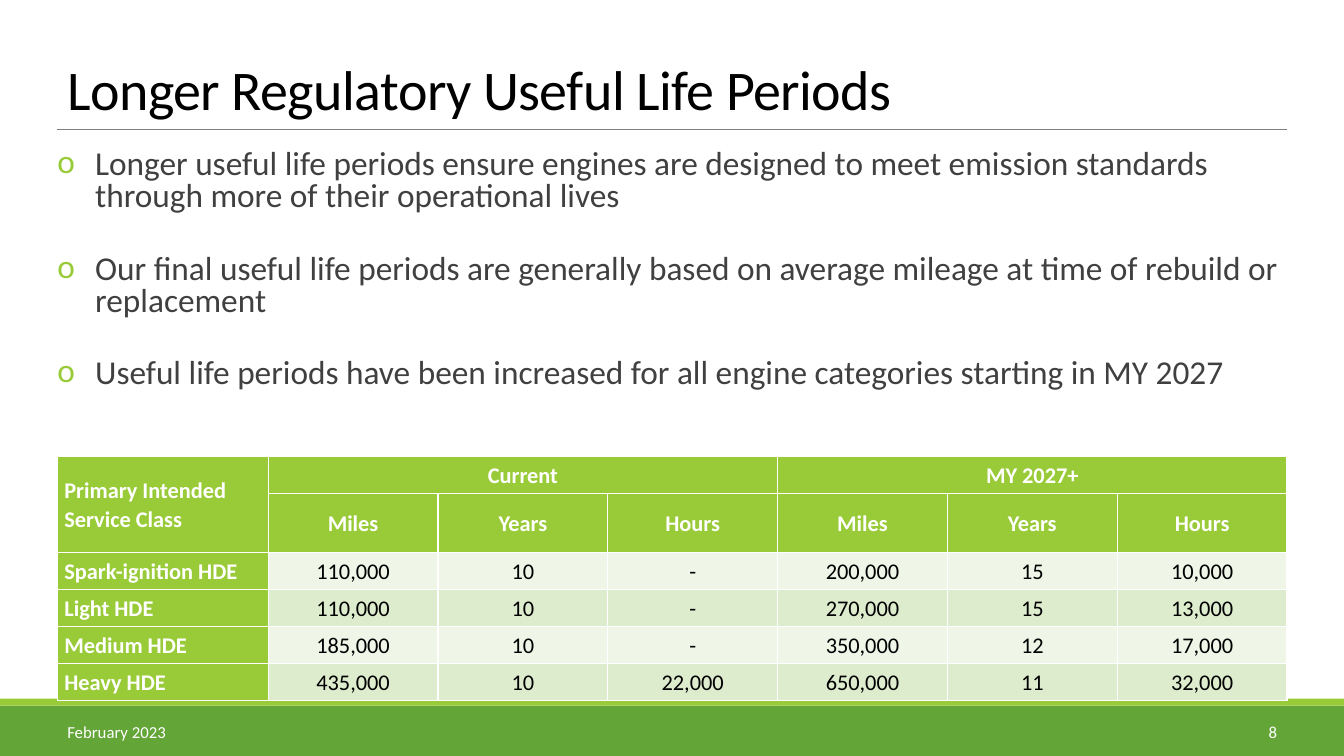
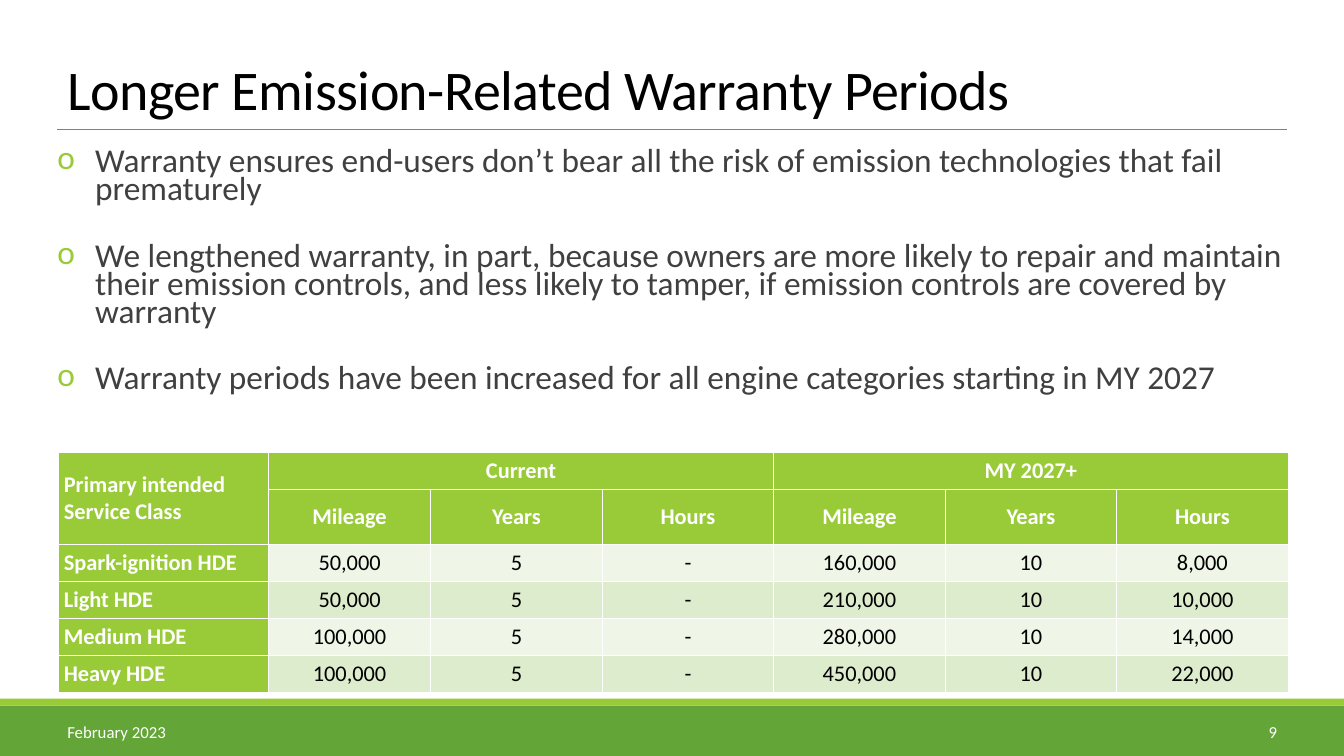
from lxml import etree
from pptx import Presentation
from pptx.dml.color import RGBColor
from pptx.enum.shapes import MSO_CONNECTOR, MSO_SHAPE
from pptx.enum.text import MSO_ANCHOR, MSO_AUTO_SIZE, PP_ALIGN
from pptx.oxml.ns import qn
from pptx.util import Pt

LEFT, CENTER, RIGHT = PP_ALIGN.LEFT, PP_ALIGN.CENTER, PP_ALIGN.RIGHT
MIDDLE, BOTTOM = MSO_ANCHOR.MIDDLE, MSO_ANCHOR.BOTTOM
NO_AUTOFIT = MSO_AUTO_SIZE.NONE
RECTANGLE, STRAIGHT = MSO_SHAPE.RECTANGLE, MSO_CONNECTOR.STRAIGHT


def color(value):
    return RGBColor.from_string(value)


def apply(target, values):
    for name, value in values.items():
        setattr(target, name, value)


def add_solid_fill(parent, value):
    fill = etree.SubElement(parent, qn("a:solidFill"))
    etree.SubElement(fill, qn("a:srgbClr"), val=value)


class Deck:
    """Holds the shared style and the slide being built."""

    FONT = "Calibri"
    GREEN, LIME = "63A537", "99CB38"
    WHITE, BLACK, GRAY, TEXT = "FFFFFF", "000000", "808080", "404040"
    STRIPES = ("EFF6E8", "DEECCE")
    WIDTH, HEIGHT = 960, 540
    MARGIN, CONTENT_WIDTH = 41, 878.4
    DATE = "February 2023"

    def __init__(self):
        self.presentation = Presentation()
        apply(self.presentation, {"slide_width": Pt(self.WIDTH),
                                  "slide_height": Pt(self.HEIGHT)})
        self.slide = None

    # Text and position helpers
    def place(self, shape, left, top, width, height):
        apply(shape, {"left": Pt(left), "top": Pt(top),
                      "width": Pt(width), "height": Pt(height)})

    def format_text(self, frame, size, text_color, bold=False, **paragraph_values):
        for paragraph in frame.paragraphs:
            apply(paragraph, paragraph_values)
            for run in paragraph.runs:
                apply(run.font, {"name": self.FONT, "size": Pt(size), "bold": bold})
                run.font.color.rgb = color(text_color)

    # Slide with the bands, rule and footer that all slides share
    def add_slide(self, title, number):
        layout = self.presentation.slide_layouts[1]
        self.slide = self.presentation.slides.add_slide(layout)
        self.add_band(504, 36, self.GREEN)
        self.add_band(499, 5, self.LIME)
        self.add_rule(92.2)
        self.add_title(title)
        self.add_footer(self.MARGIN, self.DATE, LEFT)
        self.add_footer(816, str(number), RIGHT)

    def add_band(self, top, height, fill):
        band = self.slide.shapes.add_shape(
            RECTANGLE, 0, Pt(top), Pt(self.WIDTH), Pt(height))
        band.shadow.inherit = False
        band.fill.solid()
        band.fill.fore_color.rgb = color(fill)
        band.line.fill.background()

    def add_rule(self, top):
        rule = self.slide.shapes.add_connector(
            STRAIGHT, Pt(self.MARGIN), Pt(top),
            Pt(self.MARGIN + self.CONTENT_WIDTH), Pt(top))
        rule.line.color.rgb = color(self.GRAY)
        rule.line.width = Pt(0.5)
        properties = rule.element.find(qn("p:spPr"))
        etree.SubElement(properties, qn("a:effectLst"))

    def add_title(self, text):
        title = self.slide.shapes.title
        self.place(title, self.MARGIN, 23, self.CONTENT_WIDTH, 67.7)
        frame = title.text_frame
        frame.text = text
        apply(frame, {"vertical_anchor": BOTTOM, "auto_size": NO_AUTOFIT,
                      "word_wrap": True})
        self.format_text(frame, 40, self.BLACK, alignment=LEFT, line_spacing=0.85)
        for run in frame.paragraphs[0].runs:
            run.font._element.set("spc", "-40")

    def add_footer(self, left, text, alignment):
        box = self.slide.shapes.add_textbox(Pt(left), Pt(508.3), Pt(103.4), Pt(28.8))
        frame = box.text_frame
        frame.text = text
        apply(frame, {"vertical_anchor": MIDDLE, "word_wrap": True})
        self.format_text(frame, 12, self.WHITE, alignment=alignment)

    # Bulleted list in the body placeholder
    def add_bullets(self, items, height, line_spacing, gap):
        body = self.slide.placeholders[1]
        self.place(body, self.MARGIN, 103.7, self.CONTENT_WIDTH, height)
        frame = body.text_frame
        frame.text = "\n".join(items)
        apply(frame, {"margin_left": 0, "margin_right": 0,
                      "auto_size": NO_AUTOFIT, "word_wrap": True})
        self.format_text(frame, 23.8, self.TEXT, line_spacing=line_spacing,
                         space_before=Pt(gap), space_after=Pt(0))
        for paragraph in frame.paragraphs:
            properties = paragraph._p.get_or_add_pPr()
            properties.set("marL", str(Pt(27)))
            properties.set("indent", str(Pt(-27)))
            bullet_color = etree.SubElement(properties, qn("a:buClr"))
            etree.SubElement(bullet_color, qn("a:srgbClr"), val=self.LIME)
            etree.SubElement(properties, qn("a:buFont"), typeface=self.FONT)
            etree.SubElement(properties, qn("a:buChar"), char="o")

    # Table with a two-row header and a header column
    def add_table(self, rows, left, top, widths, subheader_height, inset, line_spacing):
        heights = [26.4, subheader_height] + [26.4] * (len(rows) - 2)
        frame = self.slide.shapes.add_table(
            len(rows), len(widths), Pt(left), Pt(top), Pt(sum(widths)), Pt(sum(heights)))
        table = frame.table
        apply(table, {"first_row": False, "horz_banding": False})
        for column, width in zip(table.columns, widths):
            column.width = Pt(width)
        for row, height in zip(table.rows, heights):
            row.height = Pt(height)
        for first, last in (((0, 0), (1, 0)), ((0, 1), (0, 3)), ((0, 4), (0, 6))):
            table.cell(*first).merge(table.cell(*last))
        for row_index, row in enumerate(rows):
            for column_index, text in enumerate(row):
                header = row_index < 2 or column_index == 0
                cell = table.cell(row_index, column_index)
                self.add_cell_borders(cell)
                cell.fill.solid()
                cell.fill.fore_color.rgb = color(
                    self.LIME if header else self.STRIPES[row_index % 2])
                apply(cell, {"margin_left": Pt(inset), "margin_right": Pt(inset),
                             "margin_top": 0, "margin_bottom": 0,
                             "vertical_anchor": MIDDLE})
                if text:
                    cell.text_frame.text = text
                    self.format_text(
                        cell.text_frame, 16, self.WHITE if header else self.BLACK,
                        bold=header, line_spacing=line_spacing,
                        alignment=CENTER if column_index else LEFT)

    def add_cell_borders(self, cell):
        properties = cell._tc.get_or_add_tcPr()
        for side in ("a:lnL", "a:lnR", "a:lnT", "a:lnB"):
            line = etree.SubElement(properties, qn(side), w=str(Pt(1)))
            add_solid_fill(line, self.WHITE)


def header_rows(service_class, distance):
    return [[service_class, "Current", "", "", "MY 2027+", "", ""],
            [""] + [distance, "Years", "Hours"] * 2]


def main():
    deck = Deck()

    # Useful life
    deck.add_slide("Longer Regulatory Useful Life Periods", 8)
    deck.add_bullets([
        "Longer useful life periods ensure engines are designed to meet emission "
        "standards through more of their operational lives",
        "Our final useful life periods are generally based on average mileage at "
        "time of rebuild or replacement",
        "Useful life periods have been increased for all engine categories "
        "starting in MY 2027",
    ], height=199.4, line_spacing=0.8, gap=29)
    deck.add_table(header_rows("Primary Intended\nService Class", "Miles") + [
        ["Spark-ignition HDE", "110,000", "10", "-", "200,000", "15", "10,000"],
        ["Light HDE", "110,000", "10", "-", "270,000", "15", "13,000"],
        ["Medium HDE", "185,000", "10", "-", "350,000", "12", "17,000"],
        ["Heavy HDE", "435,000", "10", "22,000", "650,000", "11", "32,000"],
    ], left=41, top=326.3, widths=[150.6] + [121.3] * 6,
        subheader_height=42, inset=5, line_spacing=1.07)

    # Warranty
    deck.add_slide("Longer Emission-Related Warranty Periods", 9)
    deck.add_bullets([
        "Warranty ensures end-users don’t bear all the risk of emission "
        "technologies that fail prematurely",
        "We lengthened warranty, in part, because owners are more likely to repair "
        "and maintain their emission controls, and less likely to tamper, if "
        "emission controls are covered by warranty",
        "Warranty periods have been increased for all engine categories "
        "starting in MY 2027",
    ], height=193, line_spacing=0.7, gap=27.5)
    deck.add_table(header_rows("Primary intended\nService Class", "Mileage") + [
        ["Spark-ignition HDE", "50,000", "5", "-", "160,000", "10", "8,000"],
        ["Light HDE", "50,000", "5", "-", "210,000", "10", "10,000"],
        ["Medium HDE", "100,000", "5", "-", "280,000", "10", "14,000"],
        ["Heavy HDE", "100,000", "5", "-", "450,000", "10", "22,000"],
    ], left=42, top=323.3, widths=[149.8, 115.9] + [122.5] * 5,
        subheader_height=39.3, inset=3.6, line_spacing=1)

    deck.presentation.save("out.pptx")


if __name__ == "__main__":
    main()
